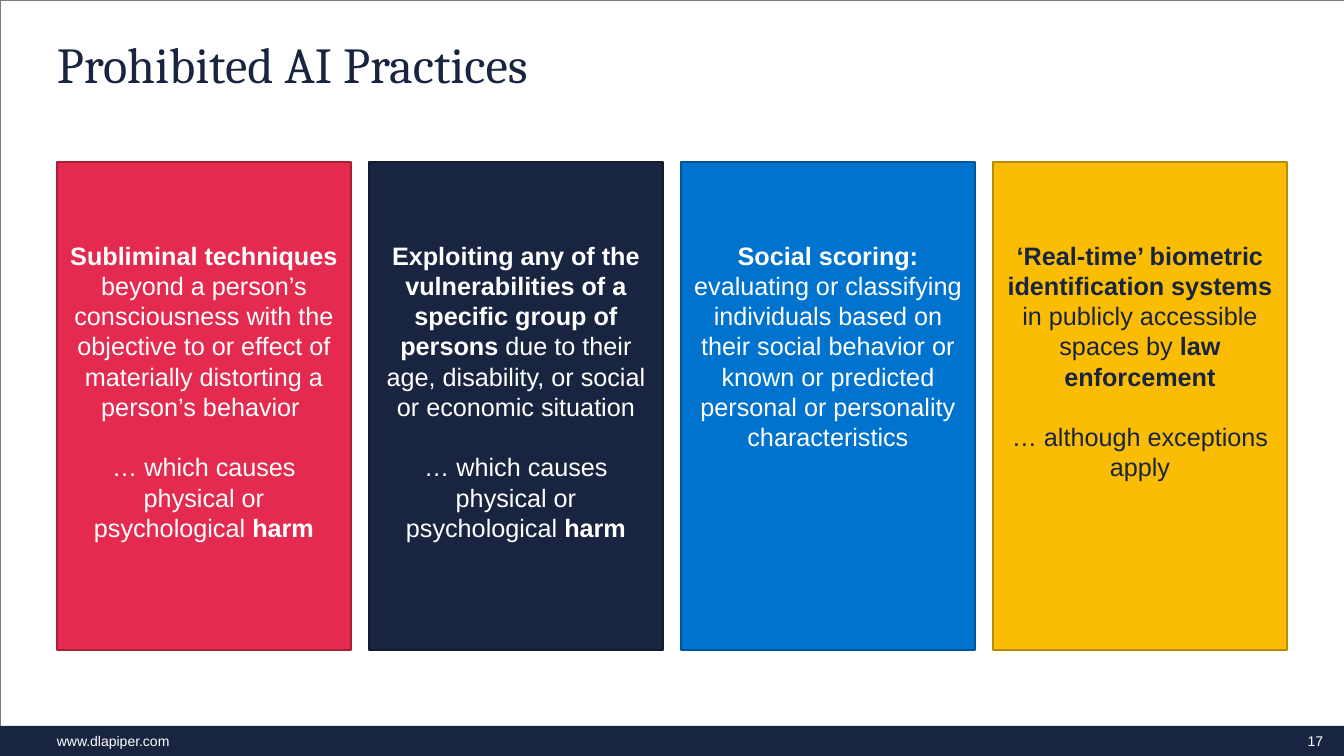
from typing import Any, NamedTuple

from pptx import Presentation, util as u
from pptx.dml.color import RGBColor
from pptx.enum import shapes, text

SLIDE_W, SLIDE_H = 1344, 756
EMU_PER_PX = 12192000 / SLIDE_W
MARGIN, CONTENT_W = 57, 1230
CARD_TOP, CARD_H, CARD_GAP = 162, 488, 18
FOOTER_TOP, FOOTER_H = 726, 30

WHITE = RGBColor(0xFF, 0xFF, 0xFF)
NAVY = RGBColor(0x18, 0x24, 0x40)
NAVY_EDGE = RGBColor(0x12, 0x1B, 0x2F)
RED = RGBColor(0xE5, 0x2A, 0x4F)
RED_EDGE = RGBColor(0xA9, 0x1F, 0x3A)
BLUE = RGBColor(0x00, 0x73, 0xCF)
BLUE_EDGE = RGBColor(0x00, 0x55, 0x99)
YELLOW = RGBColor(0xFB, 0xBD, 0x04)
YELLOW_EDGE = RGBColor(0xBA, 0x8C, 0x03)
GREY = RGBColor(0x7B, 0x7B, 0x7B)


class Span(NamedTuple):
    words: str
    bold: bool = False


class Practice(NamedTuple):
    fill: RGBColor
    edge: RGBColor
    ink: RGBColor
    paragraphs: list[list[Span]]


class FooterLabel(NamedTuple):
    words: str
    left: int
    width: int
    align: text.PP_ALIGN


HARM = [Span("… which causes physical or psychological "), Span("harm", True)]

PRACTICES = [
    Practice(RED, RED_EDGE, WHITE, [
        [Span("Subliminal techniques ", True),
         Span("beyond a person’s consciousness with the objective to or effect of "
              "materially distorting a person’s behavior ")],
        HARM,
    ]),
    Practice(NAVY, NAVY_EDGE, WHITE, [
        [Span("Exploiting any of the vulnerabilities of a specific group of persons ", True),
         Span("due to their age, disability, or social or economic situation")],
        HARM,
    ]),
    Practice(BLUE, BLUE_EDGE, WHITE, [
        [Span("Social scoring: ", True),
         Span("evaluating or classifying individuals based on their social behavior "
              "or known or predicted personal or personality characteristics")],
    ]),
    Practice(YELLOW, YELLOW_EDGE, NAVY, [
        [Span("‘Real-time’ biometric identification systems ", True),
         Span("in publicly accessible spaces by "),
         Span("law enforcement", True)],
        [Span("… although exceptions apply")],
    ]),
]

FOOTER_LABELS = [
    FooterLabel("www.dlapiper.com", MARGIN, 190, text.PP_ALIGN.LEFT),
    FooterLabel("17", 1287, 57, text.PP_ALIGN.CENTER),
]


def px(length: float) -> u.Emu:
    return u.Emu(round(length * EMU_PER_PX))


def apply(target: Any, values: dict[str, Any]) -> None:
    for name, value in values.items():
        setattr(target, name, value)


def format_frame(frame: Any, anchor: text.MSO_ANCHOR, side: int = 0, top: int = 0) -> None:
    apply(frame, {
        "word_wrap": True, "auto_size": text.MSO_AUTO_SIZE.NONE, "vertical_anchor": anchor,
        "margin_left": px(side), "margin_right": px(side),
        "margin_top": px(top), "margin_bottom": 0,
    })


def format_font(font: Any, face: str, size: int, color: RGBColor, bold: bool = False) -> None:
    apply(font, {"name": face, "size": u.Pt(size), "bold": bold})
    font.color.rgb = color


def add_panel(slide: Any, left: int, top: int, width: int, height: int,
              fill: RGBColor | None, edge: RGBColor | None, weight: float = 1) -> Any:
    panel = slide.shapes.add_shape(
        shapes.MSO_SHAPE.RECTANGLE, px(left), px(top), px(width), px(height))
    panel.shadow.inherit = False
    for paint, color in ((panel.fill, fill), (panel.line.fill, edge)):
        if color is None:
            paint.background()
        else:
            paint.solid()
            paint.fore_color.rgb = color
    if edge is not None:
        panel.line.width = u.Pt(weight)
    return panel


def add_footer_label(slide: Any, label: FooterLabel) -> None:
    box = slide.shapes.add_textbox(
        px(label.left), px(FOOTER_TOP), px(label.width), px(FOOTER_H))
    format_frame(box.text_frame, text.MSO_ANCHOR.MIDDLE)
    line = box.text_frame.paragraphs[0]
    line.text, line.alignment = label.words, label.align
    format_font(line.runs[0].font, "Arial", 10, WHITE)


def add_practice(slide: Any, practice: Practice, left: int, width: int) -> None:
    card = add_panel(slide, left, CARD_TOP, width, CARD_H, practice.fill, practice.edge)
    frame = card.text_frame
    format_frame(frame, text.MSO_ANCHOR.TOP, side=10, top=78)
    for index, spans in enumerate(practice.paragraphs):
        paragraph = frame.add_paragraph() if index else frame.paragraphs[0]
        apply(paragraph, {
            "alignment": text.PP_ALIGN.CENTER,
            "line_spacing": u.Pt(21.6),
            "space_before": u.Pt(21.6 if index else 0),
        })
        for span in spans:
            run = paragraph.add_run()
            run.text = span.words
            format_font(run.font, "Arial", 18, practice.ink, span.bold)


def set_title(slide: Any, words: str) -> None:
    title = slide.shapes.title
    apply(title, {"left": px(MARGIN), "top": px(40), "width": px(CONTENT_W), "height": px(64)})
    format_frame(title.text_frame, text.MSO_ANCHOR.TOP)
    heading = title.text_frame.paragraphs[0]
    apply(heading, {"text": words, "alignment": text.PP_ALIGN.LEFT, "line_spacing": 0.9})
    format_font(heading.runs[0].font, "Cambria", 36, NAVY)


def main() -> None:
    deck = Presentation()
    apply(deck, {"slide_width": px(SLIDE_W), "slide_height": px(SLIDE_H)})
    slide = deck.slides.add_slide(deck.slide_layouts[5])

    add_panel(slide, 0, 0, SLIDE_W, SLIDE_H, None, GREY, 0.15)
    add_panel(slide, 0, FOOTER_TOP, SLIDE_W, FOOTER_H, NAVY, None)
    for label in FOOTER_LABELS:
        add_footer_label(slide, label)

    set_title(slide, "Prohibited AI Practices")

    card_w = (CONTENT_W - CARD_GAP * (len(PRACTICES) - 1)) // len(PRACTICES)
    for column, practice in enumerate(PRACTICES):
        add_practice(slide, practice, MARGIN + column * (card_w + CARD_GAP), card_w)

    deck.save("out.pptx")


if __name__ == "__main__":
    main()
